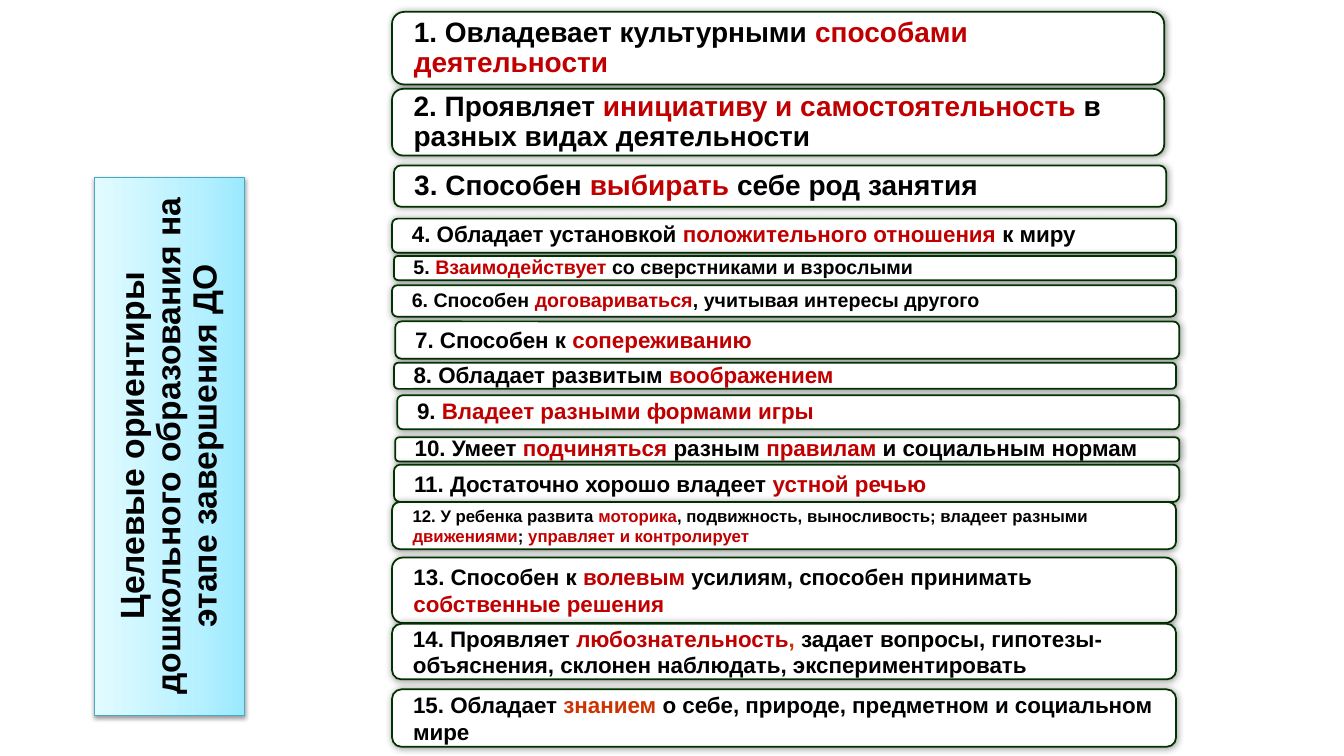
from copy import deepcopy

from lxml.etree import SubElement
from pptx import Presentation
from pptx.dml.color import RGBColor
from pptx.enum.shapes import MSO_SHAPE as Preset
from pptx.enum.text import MSO_ANCHOR as Anchor, MSO_AUTO_SIZE as AutoSize, PP_ALIGN as Align
from pptx.oxml.ns import qn
from pptx.util import Cm, Pt

COLOURS = {
    "text": "000000", "red": "C00000", "orange": "CC3300",
    "card": "FFFFFF", "card_line": "003300", "title_line": "45A9C4",
    "deep": "9BE9FF", "middle": "B8F1FF", "pale": "E2FBFF",
}
MARKS = {"*": "red", "^": "orange"}
TITLE = "Целевые ориентиры дошкольного образования на этапе завершения ДО"
TITLE_STOPS = [(0, "deep"), (0.35, "middle"), (1, "pale")]
GOALS = [
    (9.88, 0.30, 19.46, 1.83, 20, 0.9, "1. Овладевает культурными |*способами деятельности"),
    (9.88, 2.24, 19.46, 1.68, 20, 0.9,
     "2. Проявляет |*инициативу и самостоятельность |в разных видах деятельности"),
    (9.93, 4.17, 19.46, 1.04, 20, 0.9, "3. Способен |*выбирать| себе род занятия"),
    (9.88, 5.51, 19.76, 0.86, 16, 0.9,
     "4. Обладает установкой |*положительного отношения |к миру"),
    (9.93, 6.45, 19.71, 0.61, 14, 0.9, "5. |*Взаимодействует| со сверстниками и взрослыми"),
    (9.88, 7.19, 19.76, 0.79, 14, 0.9,
     "6. Способен |*договариваться|, учитывая интересы другого"),
    (9.96, 8.10, 19.76, 0.94, 16, 1.0, "7. Способен к |*сопереживанию"),
    (9.93, 9.14, 19.71, 0.66, 16, 0.9, "8. Обладает развитым |*воображением"),
    (10.01, 9.96, 19.71, 0.86, 16, 0.9, "9. |*Владеет разными формами игры"),
    (9.96, 11.02, 19.76, 0.61, 16, 0.9,
     "10. Умеет |*подчиняться |разным |*правилам| и социальным нормам"),
    (9.93, 11.71, 19.79, 0.94, 16, 1.0, "11. Достаточно хорошо владеет |*устной речью"),
    (9.88, 12.65, 19.76, 1.19, 12, 1.0,
     "12. У ребенка развита |*моторика|, подвижность, выносливость; владеет разными "
     "|*движениями|; |*управляет и контролирует"),
    (9.88, 14.05, 19.76, 1.65, 16, 1.0,
     "13. Способен к |*волевым| усилиям, способен принимать |*собственные решения"),
    (9.88, 15.72, 19.76, 1.40, 16, 1.0,
     "14. Проявляет |*любознательность|^,| задает вопросы, гипотезы-объяснения, "
     "склонен наблюдать, экспериментировать"),
    (9.88, 17.37, 19.76, 1.45, 16, 1.0,
     "15. Обладает |^знанием |о себе, природе, предметном и социальном мире"),
]


def rgb(name):
    """Return the named colour."""
    return RGBColor.from_string(COLOURS[name])


def assign(target, values):
    """Set every attribute in a dict of format values."""
    for name, value in values.items():
        setattr(target, name, value)


class SlideBuilder:
    """Hold the style and the current slide."""

    font_name = "Arial"
    frame_format = {
        "margin_left": Cm(0.46), "margin_right": Cm(0.46), "margin_top": 0, "margin_bottom": 0,
        "vertical_anchor": Anchor.MIDDLE, "word_wrap": True, "auto_size": AutoSize.NONE,
    }

    def __init__(self, slide):
        """Keep the slide to draw on."""
        self.slide = slide

    def outline(self, shape, colour, width):
        """Give a shape its border."""
        shape.line.color.rgb = rgb(colour)
        shape.line.width = Pt(width)

    def shadow(self, shape, alpha, blur, distance=0, angle=0):
        """Put a soft outer shadow behind a shape."""
        shape.shadow.inherit = False
        effects = shape._element.spPr.find(qn("a:effectLst"))
        outer = SubElement(effects, qn("a:outerShdw"), {
            "blurRad": str(Pt(blur)), "dist": str(Pt(distance)),
            "dir": str(angle * 60000), "rotWithShape": "0",
        })
        colour = SubElement(outer, qn("a:srgbClr"), val=COLOURS["text"])
        SubElement(colour, qn("a:alpha"), val=str(alpha * 1000))

    def label(self, shape, text, size, spacing, align):
        """Fill a shape with one paragraph of marked, coloured runs."""
        assign(shape.text_frame, self.frame_format)
        paragraph = shape.text_frame.paragraphs[0]
        assign(paragraph, {"alignment": align, "line_spacing": spacing, "space_before": Pt(0)})
        for piece in text.split("|"):
            run = paragraph.add_run()
            run.text = piece.lstrip("*^")
            assign(run.font, {"name": self.font_name, "size": Pt(size), "bold": True})
            run.font.color.rgb = rgb(MARKS.get(piece[0], "text"))

    def title(self, text, left, top, width, height):
        """Turn the title placeholder into an upright gradient panel."""
        title = self.slide.shapes.title
        assign(title, {"left": Cm(left), "top": Cm(top), "width": Cm(width),
                       "height": Cm(height), "rotation": 270})
        properties = title._element.spPr
        geometry = SubElement(properties, qn("a:prstGeom"), prst="roundRect")
        SubElement(geometry, qn("a:avLst"))
        title.fill.gradient()
        title.fill.gradient_angle = 90
        stops = properties.find(qn("a:gradFill")).find(qn("a:gsLst"))
        stops.append(deepcopy(stops[0]))
        for stop, (position, colour) in zip(title.fill.gradient_stops, TITLE_STOPS):
            stop.position = position
            stop.color.rgb = rgb(colour)
        self.outline(title, "title_line", 0.75)
        self.shadow(title, 38, 3.1, 1.6, 90)
        self.label(title, text, 24, 0.9, Align.CENTER)

    def card(self, left, top, width, height, size, spacing, text):
        """Add one rounded card with a goal."""
        card = self.slide.shapes.add_shape(
            Preset.ROUNDED_RECTANGLE, Cm(left), Cm(top), Cm(width), Cm(height))
        card.fill.solid()
        card.fill.fore_color.rgb = rgb("card")
        self.outline(card, "card_line", 1.25)
        self.shadow(card, 40, 5)
        self.label(card, text, size, spacing, Align.LEFT)


def main():
    """Build the slide and save it."""
    presentation = Presentation()
    assign(presentation, {"slide_width": Cm(33.87), "slide_height": Cm(19.05)})
    builder = SlideBuilder(presentation.slides.add_slide(presentation.slide_layouts[5]))
    builder.title(TITLE, -2.51, 9.35, 13.56, 3.78)
    for goal in GOALS:
        builder.card(*goal)
    presentation.save("out.pptx")


if __name__ == "__main__":
    main()
